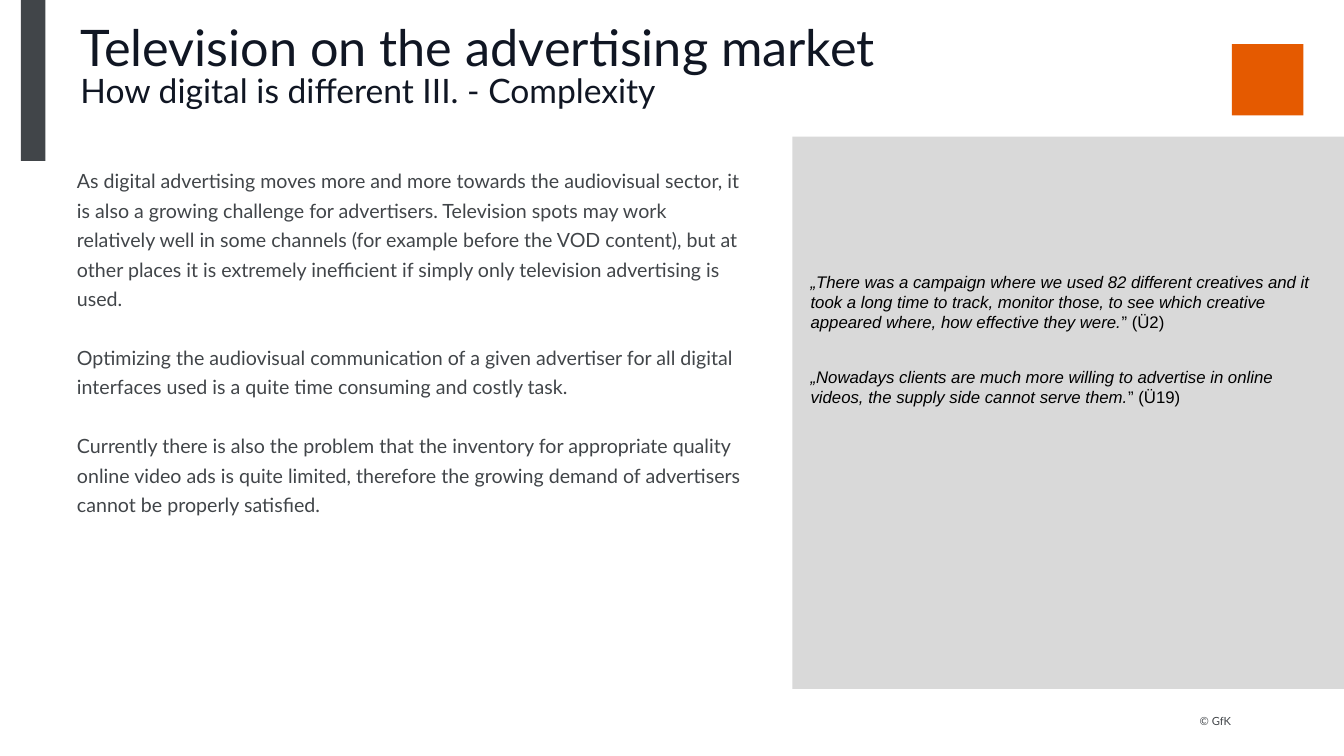
from pptx import Presentation
from pptx.dml.color import RGBColor
from pptx.enum import shapes, text
from pptx.util import Pt

INK = RGBColor(0x10, 0x16, 0x23)
SLATE = RGBColor(0x41, 0x45, 0x49)
ORANGE = RGBColor(0xE5, 0x5A, 0x00)
PANEL = RGBColor(0xD9, 0xD9, 0xD9)
BLACK = RGBColor(0, 0, 0)

TITLE = "Television on the advertising market"
SUBTITLE = "How digital is different III. - Complexity"
BODY = [
    "As digital advertising moves more and more towards the audiovisual sector, it is also a growing "
    "challenge for advertisers. Television spots may work relatively well in some channels (for example "
    "before the VOD content), but at other places it is extremely inefficient if simply only television "
    "advertising is used.",
    "Optimizing the audiovisual communication of a given advertiser for all digital interfaces used is "
    "a quite time consuming and costly task.",
    "Currently there is also the problem that the inventory for appropriate quality online video ads is "
    "quite limited, therefore the growing demand of advertisers cannot be properly satisfied.",
]
QUOTES = [
    ("„There was a campaign where we used 82 different creatives and it took a long time to track, "
     "monitor those, to see which creative appeared where, how effective they were.", "” (Ü2)"),
    ("„Nowadays clients are much more willing to advertise in online videos, the supply side cannot "
     "serve them.", "” (Ü19)"),
]
COPYRIGHT = "© GfK"

# left, top, width, height in points
BLOCKS = [
    ((880, 31.5, 51, 51), ORANGE),
    ((15, 0, 17.5, 115), SLATE),
    ((566, 97.5, 394, 394.5), PANEL),
]
TITLE_BOX = (57.5, 18, 608.5, 39)
BODY_BOX = (55, 116.8, 479.5, 390)
COPYRIGHT_BOX = (840, 509, 39.5, 11)
QUOTE_BOX = (579, 188, 368.5, 54.5)
QUOTE_PITCH = 68

TITLE_FONT = {"name": "Lato", "size": Pt(36)}
SUBTITLE_FONT = {"name": "Lato", "size": Pt(24)}
BODY_FONT = {"name": "Lato", "size": Pt(14)}
COPYRIGHT_FONT = {"name": "Lato", "size": Pt(8)}
QUOTE_FONT = {"name": "Arial", "size": Pt(12), "italic": True}
SOURCE_FONT = {**QUOTE_FONT, "italic": False}


def add_block(slide, box, color):
    shape = slide.shapes.add_shape(shapes.MSO_SHAPE.RECTANGLE, *map(Pt, box))
    shape.shadow.inherit = False
    shape.fill.solid()
    shape.fill.fore_color.rgb = color
    shape.line.fill.background()


def add_frame(slide, box, **settings):
    """Add a text box without margins and return its text frame."""
    frame = slide.shapes.add_textbox(*map(Pt, box)).text_frame
    margins = dict.fromkeys(("margin_left", "margin_top", "margin_right", "margin_bottom"), 0)
    for name, value in {**margins, "word_wrap": True, **settings}.items():
        setattr(frame, name, value)
    return frame


def add_run(paragraph, words, font, color):
    run = paragraph.add_run()
    run.text = words
    for name, value in font.items():
        setattr(run.font, name, value)
    run.font.color.rgb = color


def main():
    presentation = Presentation()
    presentation.slide_width, presentation.slide_height = Pt(960), Pt(540)
    slide = presentation.slides.add_slide(presentation.slide_layouts[6])

    for box, color in BLOCKS:
        add_block(slide, box, color)

    paragraph = add_frame(slide, TITLE_BOX).paragraphs[0]
    paragraph.line_spacing = 0.85
    add_run(paragraph, TITLE, TITLE_FONT, INK)
    paragraph.add_line_break()
    add_run(paragraph, SUBTITLE, SUBTITLE_FONT, INK)

    frame = add_frame(slide, BODY_BOX)
    for index, words in enumerate(BODY):
        paragraph = frame.add_paragraph() if index else frame.paragraphs[0]
        paragraph.line_spacing = 1.25
        if index:
            paragraph.space_before = Pt(21)
        add_run(paragraph, words, BODY_FONT, SLATE)

    left, top, width, height = QUOTE_BOX
    for index, (quote, source) in enumerate(QUOTES):
        box = (left, top + index * QUOTE_PITCH, width, height)
        paragraph = add_frame(slide, box, margin_top=Pt(6)).paragraphs[0]
        add_run(paragraph, quote, QUOTE_FONT, BLACK)
        add_run(paragraph, source, SOURCE_FONT, BLACK)

    frame = add_frame(slide, COPYRIGHT_BOX, word_wrap=False,
                      vertical_anchor=text.MSO_ANCHOR.BOTTOM)
    paragraph = frame.paragraphs[0]
    paragraph.alignment = text.PP_ALIGN.RIGHT
    paragraph.line_spacing = 1.25
    add_run(paragraph, COPYRIGHT, COPYRIGHT_FONT, SLATE)

    presentation.save("out.pptx")


if __name__ == "__main__":
    main()
